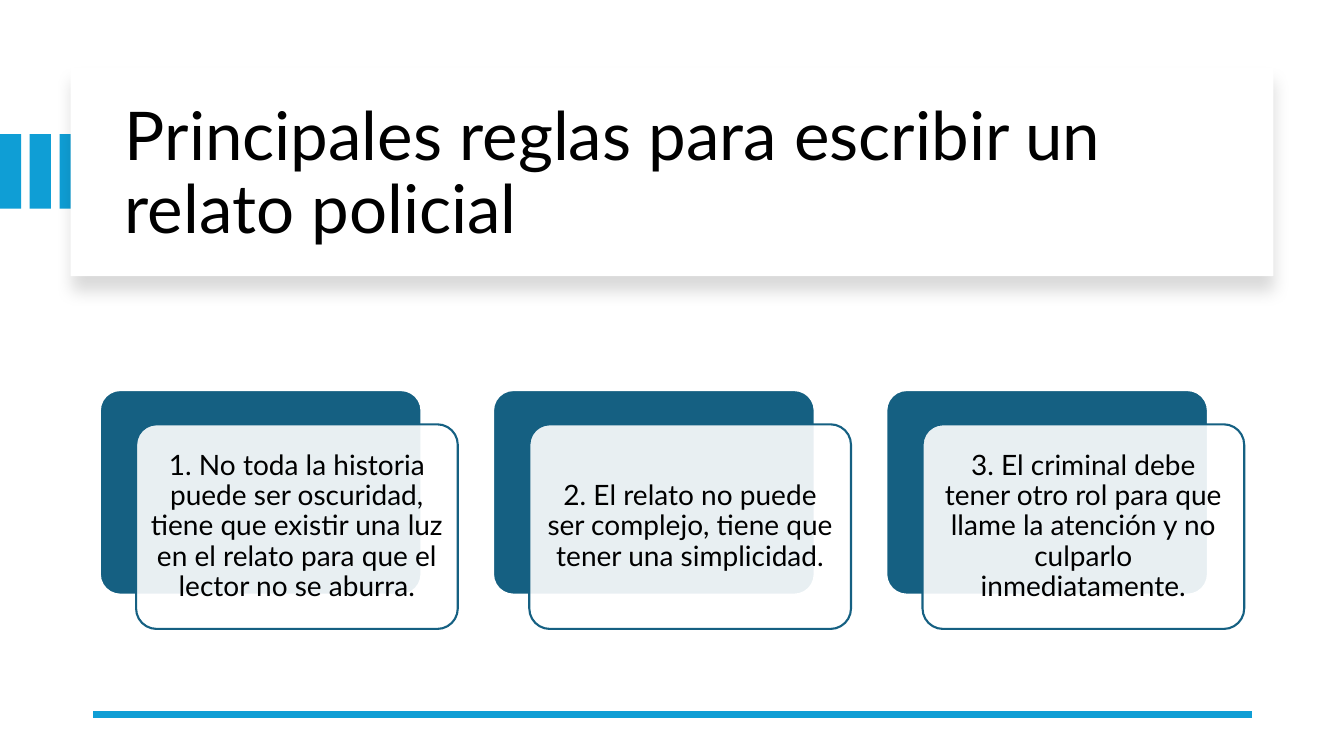
import pptx
import pptx.util
import pptx.dml.color
import pptx.enum.shapes
import pptx.enum.text
import pptx.oxml
import pptx.oxml.ns

Inches = pptx.util.Inches
Pt = pptx.util.Pt
RGBColor = pptx.dml.color.RGBColor
Shape = pptx.enum.shapes.MSO_SHAPE
Align = pptx.enum.text.PP_ALIGN
Anchor = pptx.enum.text.MSO_ANCHOR

SKY = RGBColor(0x0F, 0x9E, 0xD5)
TEAL = RGBColor(0x15, 0x60, 0x82)
WHITE = RGBColor(0xFF, 0xFF, 0xFF)
BLACK = RGBColor(0x00, 0x00, 0x00)

SHADOW = (
    '<a:outerShdw %s blurRad="%d" dist="%d" dir="5400000" algn="t" rotWithShape="0">'
    '<a:srgbClr val="000000"><a:alpha val="15000"/></a:srgbClr></a:outerShdw>'
)
RULES = [
    "1. No toda la historia puede ser oscuridad, tiene que existir una luz "
    "en el relato para que el lector no se aburra.",
    "2. El relato no puede ser complejo, tiene que tener una simplicidad.",
    "3. El criminal debe tener otro rol para que llame la atención y no "
    "culparlo inmediatamente.",
]


def apply(target, values):
    for name, value in values.items():
        setattr(target, name, value)


class Slide:
    font = "Lato"

    def __init__(self, deck):
        self.shapes = deck.slides.add_slide(deck.slide_layouts[6]).shapes

    def box(self, kind, area, fill, line=None, alpha=None):
        shape = self.shapes.add_shape(kind, *map(Inches, area))
        shape.shadow.inherit = False
        shape.fill.solid()
        shape.fill.fore_color.rgb = fill
        if line is None:
            shape.line.fill.background()
        else:
            shape.line.color.rgb = line
            shape.line.width = Pt(1.5)
        if alpha is not None:
            tint = shape.fill._xPr.find(".//" + pptx.oxml.ns.qn("a:srgbClr"))
            node = pptx.oxml.parse_xml(
                '<a:alpha %s val="%d"/>' % (pptx.oxml.ns.nsdecls("a"), alpha * 1000))
            tint.append(node)
        return shape

    def card(self, area, fill, line, alpha=None):
        shape = self.box(Shape.ROUNDED_RECTANGLE, area, fill, line, alpha)
        shape.adjustments[0] = 0.1

    def panel(self, area):
        """Add a white rectangle with a soft shadow below it."""
        shape = self.box(Shape.RECTANGLE, area, WHITE)
        effects = shape._element.spPr.find(pptx.oxml.ns.qn("a:effectLst"))
        effects.append(pptx.oxml.parse_xml(
            SHADOW % (pptx.oxml.ns.nsdecls("a"), Pt(11), Pt(10))))

    def text(self, area, words, size, align, pad):
        frame = self.shapes.add_textbox(*map(Inches, area)).text_frame
        side, edge = map(Inches, pad)
        apply(frame, {
            "word_wrap": True, "vertical_anchor": Anchor.MIDDLE,
            "margin_left": side, "margin_right": side,
            "margin_top": edge, "margin_bottom": edge,
        })
        para = frame.paragraphs[0]
        run = para.add_run()
        run.text = words
        apply(para, {"alignment": align, "line_spacing": 0.9})
        apply(run.font, {"name": self.font, "size": Pt(size)})
        run.font.color.rgb = BLACK

    def rule(self, start, end):
        line = self.shapes.add_connector(
            pptx.enum.shapes.MSO_CONNECTOR.STRAIGHT, *map(Inches, start + end))
        line.line.color.rgb = SKY
        line.line.width = Pt(4.5)
        line._element.spPr.append(pptx.oxml.parse_xml(
            "<a:effectLst %s/>" % pptx.oxml.ns.nsdecls("a")))


def main():
    deck = pptx.Presentation()
    apply(deck, {"slide_width": Inches(13.33), "slide_height": Inches(7.5)})
    slide = Slide(deck)

    for i in range(3):
        slide.box(Shape.RECTANGLE, (i * 0.295, 1.33, 0.21, 0.74), SKY)
    slide.panel((0.7, 0.67, 11.93, 2.07))
    slide.text((1.14, 0.89, 11.13, 1.7),
               "Principales reglas para escribir un relato policial",
               48, Align.LEFT, (0.1, 0.05))
    slide.rule((12.42, 7.09), (0.92, 7.09))

    wide, high = 3.19, 2.03
    for i, words in enumerate(RULES):
        left = 0.99 + i * 3.9
        slide.card((left, 3.87, wide, high), TEAL, WHITE)
        slide.card((left + 0.36, 4.21, wide, high), WHITE, TEAL, alpha=90)
        slide.text((left + 0.42, 4.27, wide - 0.12, high - 0.12),
                   words, 20, Align.CENTER, (0.08, 0.08))

    deck.save("out.pptx")


if __name__ == "__main__":
    main()
